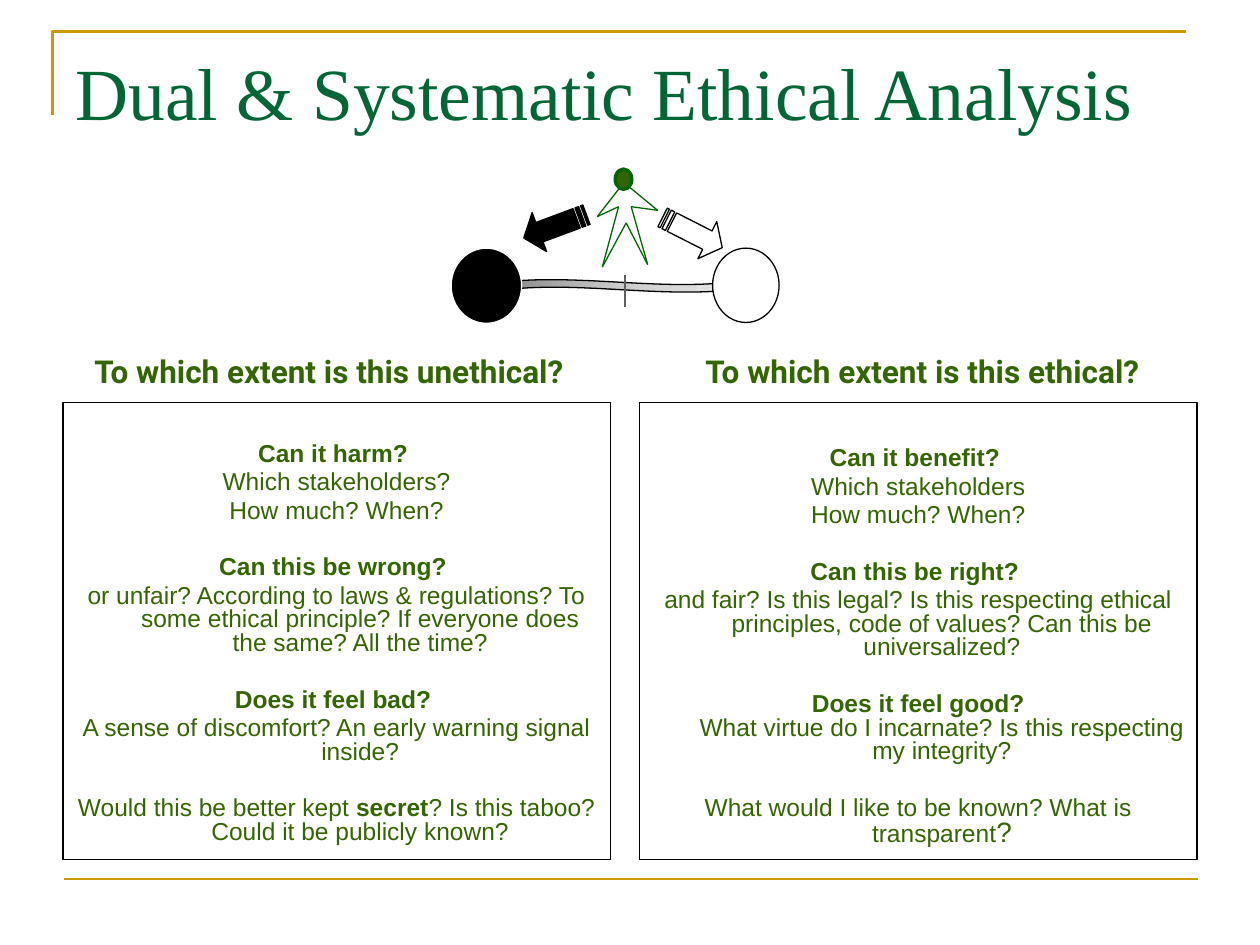
"""Build a slide that contrasts unethical and ethical questions around a balance."""
import copy
import itertools

import lxml.etree
import pptx
import pptx.dml.color
import pptx.enum.shapes
import pptx.enum.text
import pptx.oxml.ns
import pptx.util

Pt = pptx.util.Pt
RGBColor = pptx.dml.color.RGBColor
Shape = pptx.enum.shapes.MSO_SHAPE
Anchor = pptx.enum.text.MSO_ANCHOR
qn = pptx.oxml.ns.qn

GOLD = RGBColor(0xCC, 0x99, 0x00)
TITLE_GREEN = RGBColor(0x00, 0x66, 0x33)
TEXT_GREEN = RGBColor(0x33, 0x66, 0x00)
FIGURE_GREEN = RGBColor(0x00, 0x66, 0x00)
BLACK = RGBColor(0, 0, 0)
WHITE = RGBColor(255, 255, 255)
GREY = RGBColor(0x5F, 0x5F, 0x5F)
BEAM_STOPS = [(0, "878787"), (50000, "CCCCCC"), (100000, "E6E6E6")]

TITLE = "Dual & Systematic Ethical Analysis"
COLUMNS = [
    {
        "heading": "To which extent is this unethical?",
        "heading_box": (46.8, 201.8, 321, 57.6),
        "box": (36, 230.2, 312.7, 260.8),
        "top_margin": 23.2,
        "sections": [
            [[("Can it harm? ", True)], [("Which stakeholders?", False)],
             [("How much? When?", False)]],
            [[("Can this be wrong? ", True)],
             [("or unfair? According to laws & regulations? To some ethical principle? "
               "If everyone does the same? All the time?", False)]],
            [[("Does it feel bad? ", True)],
             [("A sense of discomfort? An early warning signal inside?", False)]],
            [[("Would this be better kept ", False), ("secret", True),
              ("? Is this taboo? Could it be publicly known?", False)]],
        ],
    },
    {
        "heading": "To which extent is this ethical?",
        "heading_box": (396, 201.8, 297.4, 57.6),
        "box": (365.5, 230.2, 318.5, 260.8),
        "top_margin": 25.7,
        "sections": [
            [[("Can it benefit? ", True)], [("Which stakeholders", False)],
             [("How much? When?", False)]],
            [[("Can this be right? ", True)],
             [("and fair? Is this legal? Is this respecting ethical principles, "
               "code of values? Can this be universalized?", False)]],
            [[("Does it feel good?", True), None,
              ("What virtue do I incarnate? Is this respecting my integrity?", False)]],
            [[("What would I like to be known? What is transparent", False),
              ("?", False, 16)]],
        ],
    },
]
PARAGRAPH_GAP, SECTION_GAP, HANGING_INDENT = 2.8, 19, 27

FRAME = [(30, 66), (30, 18), (678, 18)]
BOTTOM_RULE = [(36.7, 502.4), (684.7, 502.4)]
PIVOT = [(357.3, 157), (357.3, 175.7)]
FIGURE = [(356.4, 104.4), (341.3, 123.8), (353.5, 118.1), (344.2, 152.6), (357.8, 127.4),
          (370.1, 151.2), (360.7, 118.1), (375.8, 120.2), (359.3, 106.6)]
BEAM = (287.3, 159.8, 132.5, 7.2)
WHITE_BALL = (407.2, 141.8, 38, 42.5)
BLACK_BALL = (257.8, 141.8, 40.3, 43)
HEAD = (351.6, 96.7, 9.4, 11.5)
ARROWS = [((298.1, 117.4), 159.6, BLACK), ((376.6, 121), 26.9, WHITE)]
ARROW_OUTLINES = [
    [(6, 6), (28.7, 6), (28.7, 0), (38.2, 11.9), (28.7, 23.8), (28.7, 17.8), (6, 17.8)],
    [(2.6, 6), (4.8, 6), (4.8, 17.8), (2.6, 17.8)],
    [(0, 6), (1.4, 6), (1.4, 17.8), (0, 17.8)],
]


def place(shape, box):
    shape.left, shape.top, shape.width, shape.height = map(Pt, box)


def set_line(shape, color, width):
    shape.line.color.rgb = color
    shape.line.width = Pt(width)


def set_solid(shape, fill, line, width=0.75):
    shape.shadow.inherit = False
    shape.fill.solid()
    shape.fill.fore_color.rgb = fill
    set_line(shape, line, width)


def add_run(paragraph, text, font_name, size, color, bold=False):
    run = paragraph.add_run()
    run.text = text
    run.font.name, run.font.size, run.font.bold = font_name, Pt(size), bold
    run.font.color.rgb = color


def add_line(slide, start, end, color, width):
    connector = slide.shapes.add_connector(
        pptx.enum.shapes.MSO_CONNECTOR.STRAIGHT, *map(Pt, (*start, *end)))
    set_line(connector, color, width)
    lxml.etree.SubElement(connector._element.spPr, qn("a:effectLst"))


def add_solid(slide, kind, box, fill, line, width=0.75):
    shape = slide.shapes.add_shape(kind, *map(Pt, box))
    set_solid(shape, fill, line, width)
    return shape


def add_outlines(slide, outlines, close, left=0, top=0):
    moved = [[(Pt(left + x), Pt(top + y)) for x, y in outline] for outline in outlines]
    builder = slide.shapes.build_freeform(*moved[0][0])
    for number, (start, *others) in enumerate(moved):
        if number:
            builder.move_to(*start)
        builder.add_line_segments(others, close=close)
    return builder.convert_to_shape()


def add_frame(slide):
    frame = add_outlines(slide, [FRAME], False)
    frame.shadow.inherit = False
    frame.fill.background()
    set_line(frame, GOLD, 1.5)


def fill_title(title):
    place(title, (36, 21.6, 648, 61.2))
    title.text_frame.vertical_anchor = Anchor.MIDDLE
    title.text_frame.auto_size = pptx.enum.text.MSO_AUTO_SIZE.NONE
    paragraph = title.text_frame.paragraphs[0]
    paragraph.alignment = pptx.enum.text.PP_ALIGN.LEFT
    add_run(paragraph, TITLE, "Times New Roman", 42, TITLE_GREEN)


def fill_body(body, column):
    place(body, column["box"])
    set_line(body, BLACK, 0.75)
    frame = body.text_frame
    frame.vertical_anchor = Anchor.TOP
    frame.margin_top = Pt(column["top_margin"])
    frame.auto_size = pptx.enum.text.MSO_AUTO_SIZE.NONE
    gap = 0
    paragraph = frame.paragraphs[0]
    for section in column["sections"]:
        for runs in section:
            if paragraph is None:
                paragraph = frame.add_paragraph()
            paragraph.alignment = pptx.enum.text.PP_ALIGN.CENTER
            paragraph.line_spacing = 0.8
            paragraph.space_before, paragraph.space_after = Pt(gap), Pt(0)
            properties = paragraph._p.get_or_add_pPr()
            properties.set("marL", str(Pt(HANGING_INDENT)))
            properties.set("indent", str(-Pt(HANGING_INDENT)))
            lxml.etree.SubElement(properties, qn("a:buNone"))
            for item in runs:
                if item is None:
                    paragraph.add_line_break()
                else:
                    text, bold, *size = item
                    add_run(paragraph, text, "Arial", size[0] if size else 14, TEXT_GREEN, bold)
            paragraph, gap = None, PARAGRAPH_GAP
        gap = SECTION_GAP


def add_heading(slide, column):
    heading = slide.shapes.add_textbox(*map(Pt, column["heading_box"]))
    heading.text_frame.word_wrap = True
    paragraph = heading.text_frame.paragraphs[0]
    paragraph.line_spacing, paragraph.space_before = 0.8, Pt(3.6)
    add_run(paragraph, column["heading"], "Roboto", 18, TEXT_GREEN, True)


def add_beam(slide):
    beam = add_solid(slide, Shape.WAVE, BEAM, WHITE, BLACK)
    beam.adjustments[0], beam.adjustments[1] = 0.206, 0.006
    beam.fill.gradient()
    beam.fill.gradient_angle = 0
    stops = beam._element.spPr.find(qn("a:gradFill")).find(qn("a:gsLst"))
    for stop in list(stops):
        stops.remove(stop)
    for position, color in BEAM_STOPS:
        stop = lxml.etree.SubElement(stops, qn("a:gs"), pos=str(position))
        lxml.etree.SubElement(stop, qn("a:srgbClr"), val=color)


def add_balance(slide):
    add_beam(slide)
    add_solid(slide, Shape.OVAL, WHITE_BALL, WHITE, BLACK)
    for corner, rotation, fill in ARROWS:
        arrow = add_outlines(slide, ARROW_OUTLINES, True, *corner)
        set_solid(arrow, fill, BLACK)
        arrow.rotation = rotation
    add_solid(slide, Shape.OVAL, BLACK_BALL, BLACK, WHITE)
    for start, end in itertools.pairwise(FIGURE):
        add_line(slide, start, end, FIGURE_GREEN, 0.75)
    add_solid(slide, Shape.OVAL, HEAD, TEXT_GREEN, FIGURE_GREEN, 2)
    add_line(slide, *PIVOT, GREY, 1)


def main():
    presentation = pptx.Presentation()
    presentation.slide_width, presentation.slide_height = Pt(720), Pt(540)
    slide = presentation.slides.add_slide(presentation.slide_layouts[3])
    title, *bodies = list(slide.placeholders)[:3]
    for placeholder in list(slide.placeholders)[3:]:
        placeholder._element.getparent().remove(placeholder._element)
    add_frame(slide)
    add_line(slide, *BOTTOM_RULE, GOLD, 1.5)
    fill_title(title)
    for body, column in zip(bodies, COLUMNS):
        fill_body(body, column)
        add_heading(slide, column)
    add_balance(slide)
    presentation.save("out.pptx")


if __name__ == "__main__":
    main()
